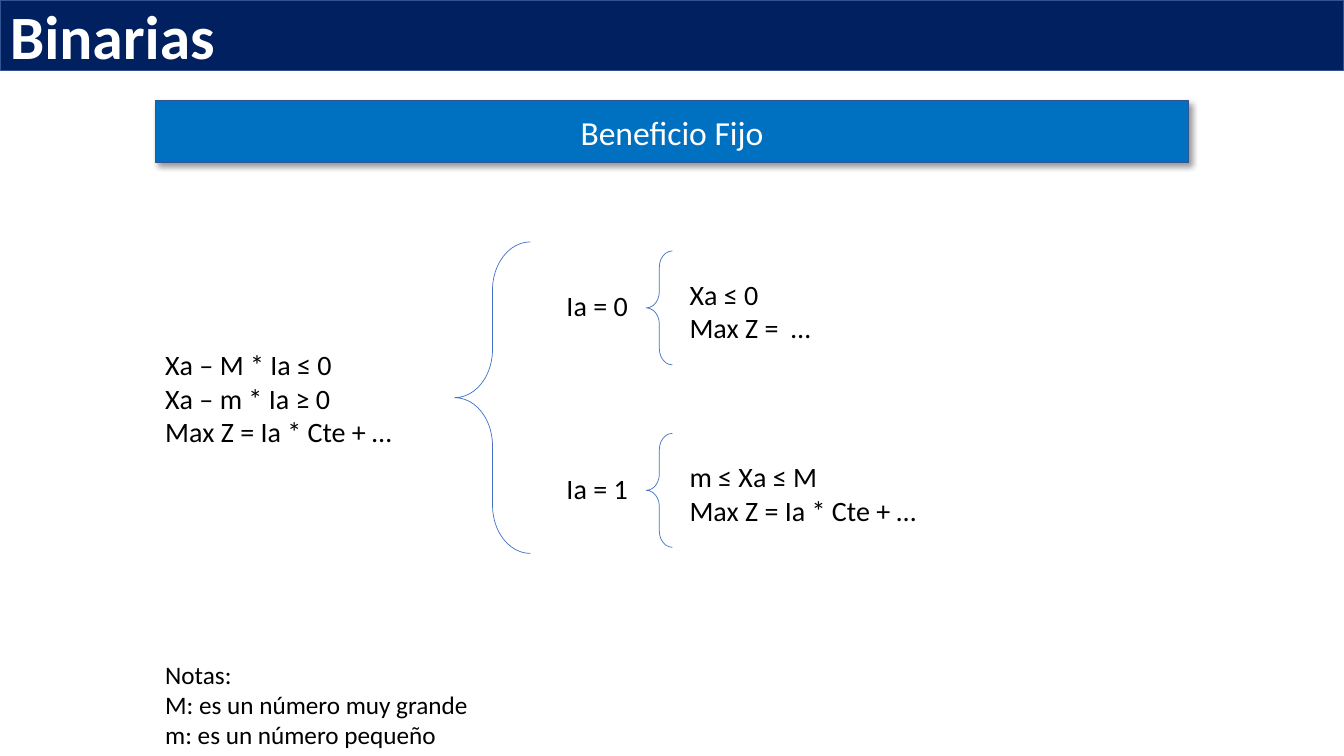
from lxml import etree
from pptx import Presentation
from pptx.dml.color import RGBColor
from pptx.enum.shapes import MSO_SHAPE as SHAPE
from pptx.enum.text import MSO_ANCHOR as ANCHOR, PP_ALIGN as ALIGN
from pptx.oxml.ns import qn
from pptx.util import Inches, Pt

NAVY = RGBColor(0x00, 0x20, 0x60)
BLUE = RGBColor(0x00, 0x70, 0xC0)
EDGE = RGBColor(0x32, 0x54, 0x91)
BRACE = RGBColor(0x44, 0x72, 0xC4)
WHITE = RGBColor(0xFF, 0xFF, 0xFF)
BLACK = RGBColor(0x00, 0x00, 0x00)

prs = Presentation()
prs.slide_width, prs.slide_height = Inches(13.33), Inches(7.5)
s = prs.slides.add_slide(prs.slide_layouts[6])


def add_text(text, box, size=20, color=BLACK, bold=False, align=ALIGN.LEFT,
             anchor=ANCHOR.MIDDLE, fill=None):
    box = [Inches(v) for v in box]
    if fill is None:
        sp = s.shapes.add_textbox(*box)
    else:
        sp = s.shapes.add_shape(SHAPE.RECTANGLE, *box)
        sp.shadow.inherit = False
        sp.fill.solid()
        sp.fill.fore_color.rgb = fill
        sp.line.color.rgb = EDGE
        sp.line.width = Pt(1)
    tf = sp.text_frame
    tf.word_wrap = True
    tf.vertical_anchor = anchor
    for i, line in enumerate(text.split("\n")):
        p = tf.paragraphs[0] if i == 0 else tf.add_paragraph()
        p.alignment = align
        r = p.add_run()
        r.text = line
        r.font.name = "Calibri"
        r.font.size = Pt(size)
        r.font.bold = bold
        r.font.color.rgb = color
    return sp


def add_brace(box, curve):
    sp = s.shapes.add_shape(SHAPE.LEFT_BRACE, *[Inches(v) for v in box])
    sp.shadow.inherit = False
    sp.fill.background()
    sp.line.color.rgb = BRACE
    sp.line.width = Pt(0.5)
    sp.adjustments[0] = curve
    sp.adjustments[1] = 0.5


LEFT = 1.54
add_text("Binarias", (0, 0, 13.33, 0.7), size=44, color=WHITE, bold=True, fill=NAVY)
banner = add_text("Beneficio Fijo", (LEFT, 1, 10.25, 0.61), size=24, color=WHITE,
                  align=ALIGN.CENTER, fill=BLUE)
effects = banner._element.spPr.find(qn("a:effectLst"))
shadow = etree.SubElement(effects, qn("a:outerShdw"), blurRad=str(Pt(4)),
                          dist=str(Pt(3)), dir="2700000", algn="tl", rotWithShape="0")
shade = etree.SubElement(shadow, qn("a:srgbClr"), val="000000")
etree.SubElement(shade, qn("a:alpha"), val="40000")

add_text("Xa – M * Ia ≤ 0\nXa – m * Ia ≥ 0\nMax Z = Ia * Cte + …", (LEFT, 3.6, 3.23, 0.7))
add_text("Notas:\nM: es un número muy grande\nm: es un número pequeño",
         (LEFT, 6.49, 6.81, 1.01), size=18, anchor=ANCHOR.TOP)

add_brace((4.51, 2.4, 0.75, 3.09), 0.637)
cases = [("Ia = 0", "Xa ≤ 0\nMax Z =  …"),
         ("Ia = 1", "m ≤ Xa ≤ M\nMax Z = Ia * Cte + …")]
for row, (case, result) in enumerate(cases):
    top = 2.49 + 1.81 * row
    add_text(case, (5.52, top + 0.19, 1.02, 0.7))
    add_brace((6.41, top, 0.26, 1.13), 0.616)
    add_text(result, (6.74, top + 0.21, 4.61, 0.77), anchor=ANCHOR.TOP)

prs.save("out.pptx")
